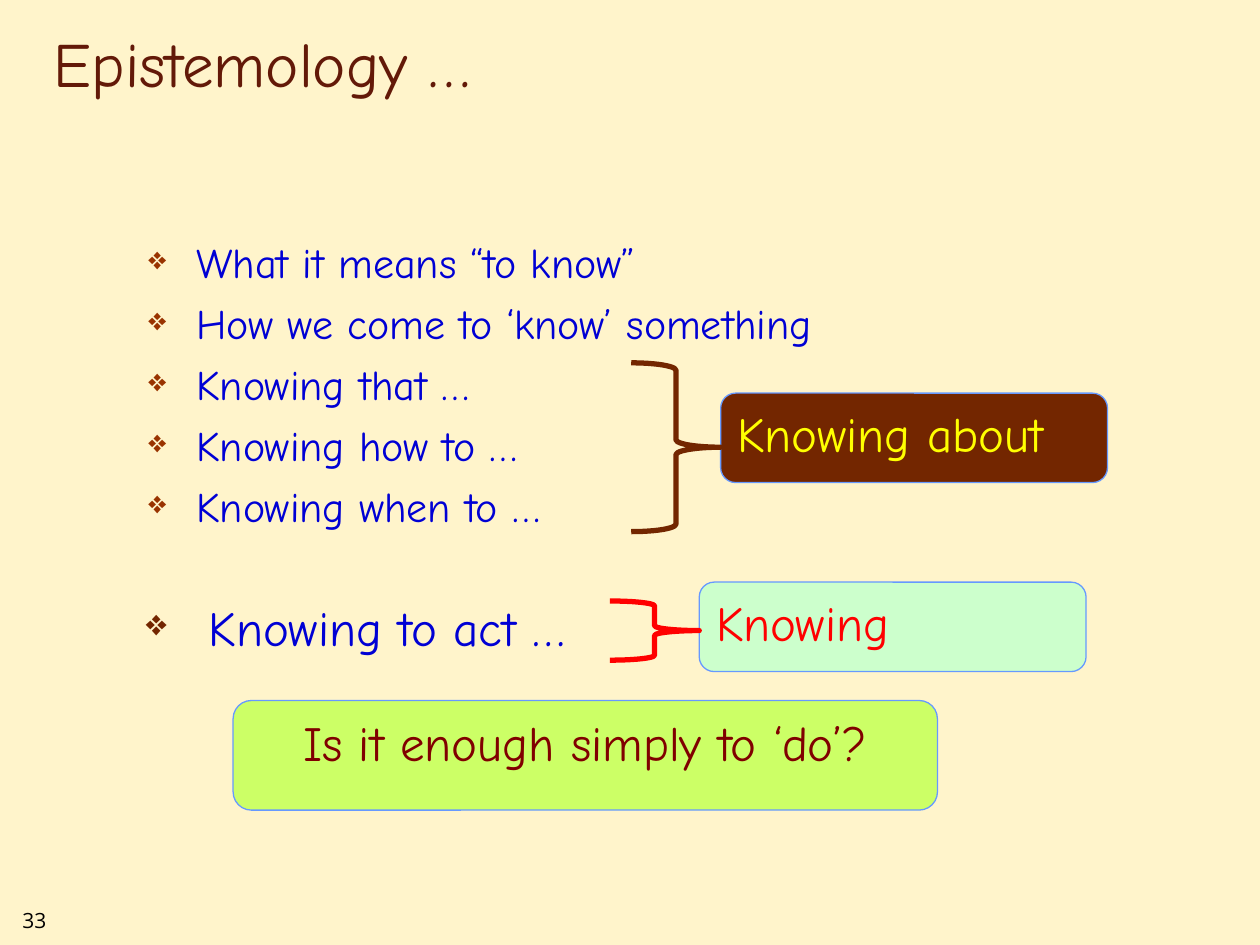
from lxml import etree
from pptx import Presentation
from pptx.dml.color import RGBColor
from pptx.enum.shapes import MSO_SHAPE
from pptx.enum.text import MSO_ANCHOR, PP_ALIGN
from pptx.oxml.ns import qn
from pptx.util import Inches, Pt

BOX, BRACE = MSO_SHAPE.ROUNDED_RECTANGLE, MSO_SHAPE.RIGHT_BRACE
TOP, BOTTOM = MSO_ANCHOR.TOP, MSO_ANCHOR.BOTTOM
LEFT, CENTER = PP_ALIGN.LEFT, PP_ALIGN.CENTER

THEME = {
    "font": "Comic Neue", "number_font": "Open Sans",
    "title_size": 36, "callout_size": 28, "body_size": 24, "number_size": 12,
    "paper": "FFF4CB", "title": "631908", "body": "0000D4", "number": "000000",
    "bullet": "993300", "brown": "732600", "yellow": "FFFF00", "red": "FF0000",
    "mint": "CCFFCC", "lime": "CCFF66", "maroon": "800000", "outline": "6699FF",
}

TITLE = "Epistemology …"
NUMBER = "33"
WAYS = [
    "What it means “to know”",
    "How we come to ‘know’ something",
    "Knowing that …",
    "Knowing how to …",
    "Knowing when to …",
]
ACT = "Knowing to act …"
QUESTION = "Is it enough simply to ‘do’?"

# Each callout: label, box corner, brace top and height, fill, text, brace colour
KNOWING = ("Knowing", (5.55, 4.62), (4.77, 0.47), "mint", "red", "red")
ABOUT = ("Knowing about", (5.72, 3.12), (2.88, 1.34), "brown", "yellow", "brown")
CALLOUT_SIZE = (3.07, 0.71)
BRACE_WIDTH = 0.71


def color(name):
    return RGBColor.from_string(THEME[name])


def inches(*values):
    return [Inches(v) for v in values]


def add_run(p, text, size, ink, font="font"):
    r = p.add_run()
    r.text = text
    r.font.name = THEME[font]
    r.font.size = Pt(THEME[size])
    r.font.color.rgb = color(ink)


def add_bullet(p, ink, indent):
    pPr = p._p.get_or_add_pPr()
    pPr.set("marL", str(Inches(indent)))
    pPr.set("indent", str(-Inches(indent)))
    clr = etree.SubElement(pPr, qn("a:buClr"))
    etree.SubElement(clr, qn("a:srgbClr"), val=THEME[ink])
    etree.SubElement(pPr, qn("a:buSzPct"), val="75000")
    etree.SubElement(pPr, qn("a:buChar"), char="❖")


def add_text(shapes, at, lines, size, ink, font="font", anchor=TOP,
             bullet=None, indent=0, gap=0):
    tf = shapes.add_textbox(*inches(*at)).text_frame
    tf.word_wrap = True
    tf.vertical_anchor = anchor
    for i, line in enumerate(lines):
        p = tf.paragraphs[0] if i == 0 else tf.add_paragraph()
        p.space_before = Pt(gap)
        if bullet:
            add_bullet(p, bullet, indent)
        add_run(p, line, size, ink, font)


def add_box(shapes, at, text, fill, ink, align=LEFT):
    sp = shapes.add_shape(BOX, *inches(*at))
    sp.shadow.inherit = False
    sp.fill.solid()
    sp.fill.fore_color.rgb = color(fill)
    sp.line.color.rgb = color("outline")
    sp.line.width = Pt(0.75)
    tf = sp.text_frame
    tf.word_wrap = True
    tf.vertical_anchor = TOP
    p = tf.paragraphs[0]
    p.alignment = align
    add_run(p, text, "callout_size", ink)


def add_callout(s, text, corner, brace, fill, ink, brace_ink):
    """Group a label box with the brace that points to it from the left."""
    shapes = s.shapes.add_group_shape().shapes
    add_box(shapes, corner + CALLOUT_SIZE, text, fill, ink)
    top, height = brace
    sp = shapes.add_shape(
        BRACE, *inches(corner[0] - BRACE_WIDTH, top, BRACE_WIDTH, height))
    sp.shadow.inherit = False
    sp.fill.background()
    sp.line.color.rgb = color(brace_ink)
    sp.line.width = Pt(3)


def main():
    prs = Presentation()
    prs.slide_width, prs.slide_height = inches(10, 7.5)
    s = prs.slides.add_slide(prs.slide_layouts[6])
    s.background.fill.solid()
    s.background.fill.fore_color.rgb = color("paper")

    add_text(s.shapes, (0.08, 7.15, 0.75, 0.3), [NUMBER],
             "number_size", "number", font="number_font")
    add_text(s.shapes, (0.33, 0.17, 9.39, 0.67), [TITLE],
             "title_size", "title", anchor=BOTTOM)
    add_text(s.shapes, (1.08, 1.83, 8.45, 2.63), WAYS,
             "body_size", "body", bullet="bullet", indent=0.38, gap=6)
    add_callout(s, *KNOWING)
    add_text(s.shapes, (1.06, 4.69, 5, 0.57), [ACT],
             "callout_size", "body", bullet="brown", indent=0.5)
    add_callout(s, *ABOUT)
    add_box(s.shapes, (1.85, 5.56, 5.59, 0.87), QUESTION, "lime", "maroon", CENTER)

    prs.save("out.pptx")


if __name__ == "__main__":
    main()
